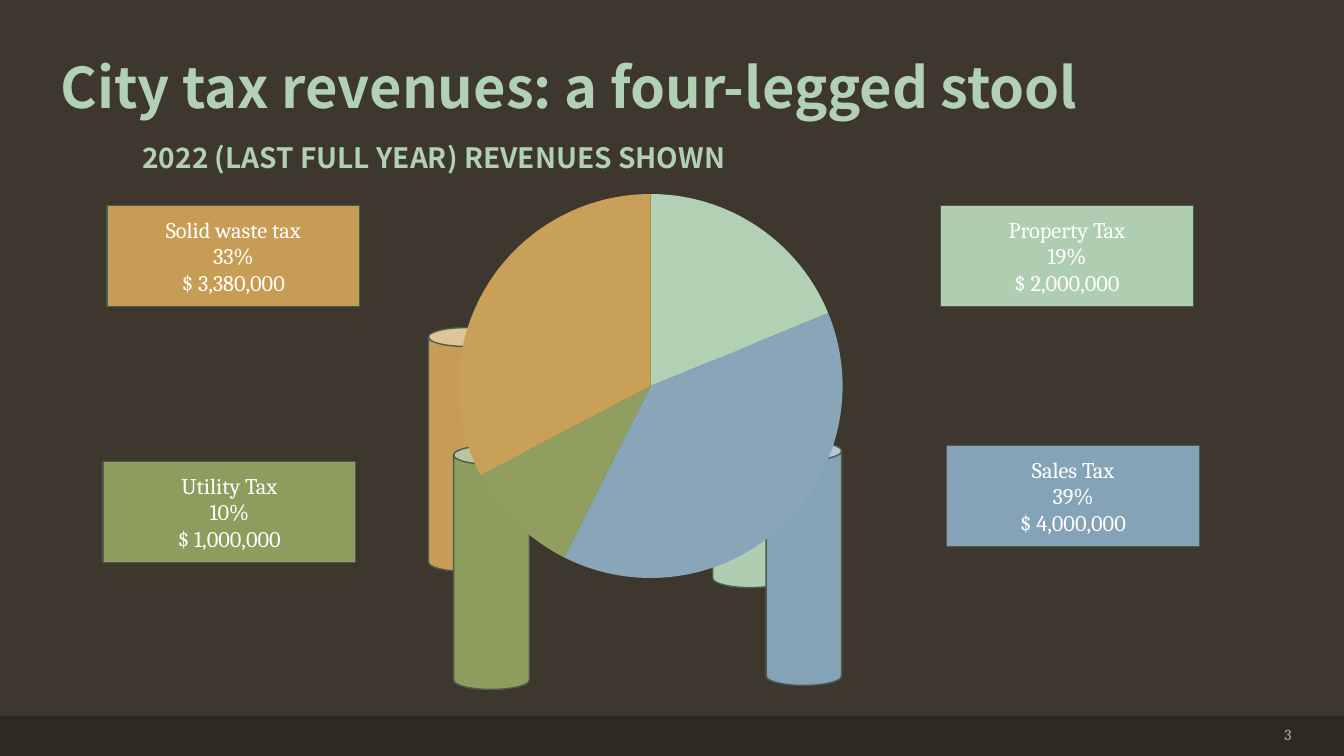
from dataclasses import dataclass
from typing import NamedTuple

from lxml.etree import SubElement
from pptx import Presentation
from pptx.chart.data import CategoryChartData
from pptx.dml.color import RGBColor
from pptx.enum.chart import XL_CHART_TYPE
from pptx.enum.shapes import MSO_SHAPE
from pptx.enum.text import MSO_ANCHOR, MSO_AUTO_SIZE, PP_ALIGN
from pptx.oxml.ns import qn
from pptx.shapes.autoshape import Shape
from pptx.slide import Slide
from pptx.text.text import TextFrame
from pptx.util import Pt


@dataclass(frozen=True)
class Theme:
    back: str = "3D372E"
    band: str = "2E2923"
    edge: str = "4E5B4F"
    head: str = "B2D0B4"
    page: str = "BAB1A3"
    white: str = "FFFFFF"
    sans: str = "Noto Sans CJK SC"
    serif: str = "Cambria"
    title: float = 40
    sub: float = 20
    label: float = 16
    small: float = 11
    chart: float = 10


class Box(NamedTuple):
    left: float
    top: float
    width: float
    height: float


class Tax(NamedTuple):
    name: str
    share: int
    amount: str
    slice: str
    fill: str
    leg: tuple[float, float]
    label: tuple[float, float]


THEME = Theme()
LEG = (54, 174.24)
LABEL = (180.72, 72)
PIE = Box(221.76, 128.88, 486, 293.76)
DISC = 274.3

PROP = Tax("Property Tax", 19, "$ 2,000,000", "B2D0B4", "AFCDB1",
           (509.04, 245.52), (671.76, 146.88))
SALES = Tax("Sales Tax", 39, "$ 4,000,000", "88A5BA", "85A3B7",
            (547.2, 315.36), (676.08, 318.24))
UTIL = Tax("Utility Tax", 10, "$ 1,000,000", "909F5F", "8D9D5E",
           (324, 318.24), (73.44, 329.76))
WASTE = Tax("Solid waste tax", 33, "$ 3,380,000", "C9A057", "C79D56",
            (306, 234), (76.32, 146.88))
SLICES = (PROP, SALES, UTIL, WASTE)
LEGS = (PROP, WASTE, UTIL, SALES)


def rgb(code: str) -> RGBColor:
    return RGBColor.from_string(code)


def write(frame: TextFrame, text: str, size: float, color: str, face: str,
          bold: bool = False, align: PP_ALIGN = PP_ALIGN.CENTER) -> None:
    frame.text = text
    for para in frame.paragraphs:
        para.alignment = align
        for run in para.runs:
            run.font.size = Pt(size)
            run.font.name = face
            run.font.bold = bold
            run.font.color.rgb = rgb(color)


def block(slide: Slide, kind: MSO_SHAPE, box: Box, fill: str,
          edge: str | None = None) -> Shape:
    shape = slide.shapes.add_shape(kind, *map(Pt, box))
    shape.shadow.inherit = False
    shape.fill.solid()
    shape.fill.fore_color.rgb = rgb(fill)
    if edge:
        shape.line.color.rgb = rgb(edge)
        shape.line.width = Pt(1)
    else:
        shape.line.fill.background()
    return shape


def add_title(slide: Slide) -> None:
    title = slide.shapes.title
    title.left, title.top, title.width, title.height = map(
        Pt, Box(30.96, 33.84, 750.96, 55.44))
    frame = title.text_frame
    write(frame, "City tax revenues: a four-legged stool",
          THEME.title, THEME.head, THEME.sans, bold=True)
    frame.word_wrap = False
    frame.auto_size = MSO_AUTO_SIZE.NONE
    frame.vertical_anchor = MSO_ANCHOR.TOP


def add_text(slide: Slide, box: Box) -> TextFrame:
    frame = slide.shapes.add_textbox(*map(Pt, box)).text_frame
    frame.word_wrap = True
    return frame


def add_pie(slide: Slide) -> None:
    data = CategoryChartData()
    data.categories = [str(num) for num in range(1, len(SLICES) + 1)]
    data.add_series("Series 1", [tax.share for tax in SLICES])
    chart = slide.shapes.add_chart(
        XL_CHART_TYPE.PIE, *map(Pt, PIE), data).chart
    chart.has_title = False
    chart.has_legend = False
    chart.font.name = THEME.serif
    chart.font.size = Pt(THEME.chart)
    chart.font.color.rgb = rgb(THEME.white)
    plot = chart.plots[0]
    plot.vary_by_categories = True
    for num, tax in enumerate(SLICES):
        point = plot.series[0].points[num].format
        point.fill.solid()
        point.fill.fore_color.rgb = rgb(tax.slice)
        point.line.fill.background()
    place_disc(next(chart.element.iter(qn("c:plotArea"))))


def place_disc(area) -> None:
    for old in area.findall(qn("c:layout")):
        area.remove(old)
    layout = SubElement(area, qn("c:layout"))
    area.insert(0, layout)
    manual = SubElement(layout, qn("c:manualLayout"))
    wide, high = DISC / PIE.width, DISC / PIE.height
    parts = {"layoutTarget": "inner", "xMode": "edge", "yMode": "edge",
             "x": (1 - wide) / 2, "y": (1 - high) / 2, "w": wide, "h": high}
    for tag, val in parts.items():
        SubElement(manual, qn(f"c:{tag}")).set("val", str(val))


def add_label(slide: Slide, tax: Tax) -> None:
    shape = block(slide, MSO_SHAPE.RECTANGLE, Box(*tax.label, *LABEL),
                  tax.fill, THEME.edge)
    frame = shape.text_frame
    frame.vertical_anchor = MSO_ANCHOR.MIDDLE
    write(frame, f"{tax.name}\n{tax.share}%\n{tax.amount}",
          THEME.label, THEME.white, THEME.serif)


def main() -> None:
    deck = Presentation()
    deck.slide_width, deck.slide_height = Pt(960), Pt(540)
    slide = deck.slides.add_slide(deck.slide_layouts[5])
    slide.background.fill.solid()
    slide.background.fill.fore_color.rgb = rgb(THEME.back)

    add_title(slide)
    block(slide, MSO_SHAPE.RECTANGLE, Box(0, 511.2, 960, 28.8), THEME.band)
    for tax in LEGS:
        block(slide, MSO_SHAPE.CAN, Box(*tax.leg, *LEG), tax.fill, THEME.edge)
    page = add_text(slide, Box(894.24, 515.52, 35.28, 18))
    page.vertical_anchor = MSO_ANCHOR.MIDDLE
    write(page, "3", THEME.small, THEME.page, THEME.serif,
          align=PP_ALIGN.RIGHT)
    add_pie(slide)
    sub = add_text(slide, Box(73.44, 96.48, 473.04, 31.68))
    write(sub, "2022 (LAST FULL YEAR) REVENUES SHOWN",
          THEME.sub, THEME.head, THEME.sans, bold=True)
    for tax in SLICES:
        add_label(slide, tax)
    deck.save("out.pptx")


if __name__ == "__main__":
    main()
